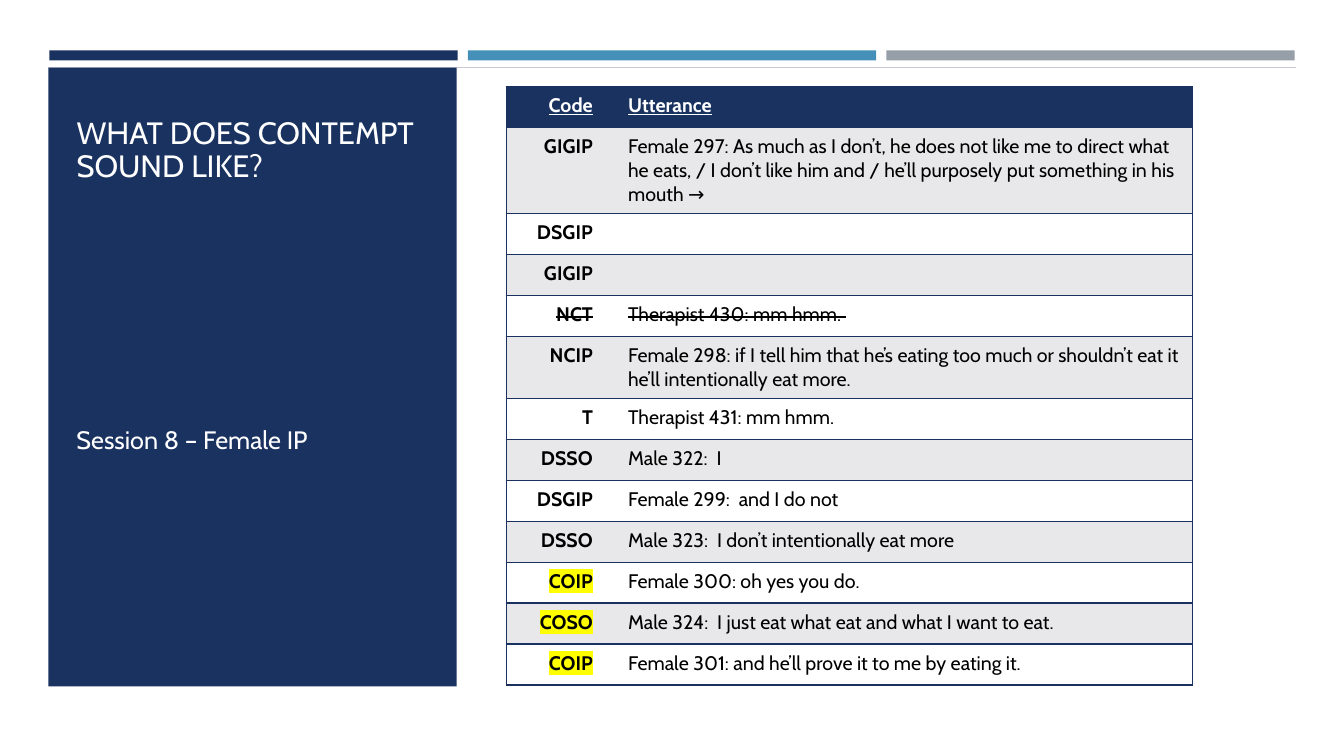
from lxml.etree import SubElement
from pptx import Presentation
from pptx.dml.color import RGBColor
from pptx.enum.shapes import MSO_CONNECTOR as Connector, MSO_SHAPE as Shape
from pptx.enum.text import MSO_ANCHOR as Anchor, MSO_AUTO_SIZE as AutoSize, PP_ALIGN as Align
from pptx.oxml.ns import qn
from pptx.util import Inches, Pt

NAVY, BLUE, GREY = "1A3260", "4590B8", "969FA7"
WHITE, BLACK, BAND, YELLOW, HAIRLINE = "FFFFFF", "000000", "E8E8EA", "FFFF00", "C8CCD2"
NO_GRID_STYLE = "{2D5ABB26-0587-4C30-8999-92F81FD0307C}"

UTTERANCES = [
    ("GIGIP", "Female 297: As much as I don’t, he does not like me to direct what he eats, "
              "/ I don’t like him and / he’ll purposely put something in his mouth →"),
    ("DSGIP", ""),
    ("GIGIP", ""),
    ("NCT", "Therapist 430: mm hmm. "),
    ("NCIP", "Female 298: if I tell him that he’s eating too much or shouldn’t eat it "
             "he’ll intentionally eat more."),
    ("T", "Therapist 431: mm hmm."),
    ("DSSO", "Male 322:  I"),
    ("DSGIP", "Female 299:  and I do not"),
    ("DSSO", "Male 323:  I don’t intentionally eat more"),
    ("COIP", "Female 300: oh yes you do."),
    ("COSO", "Male 324:  I just eat what eat and what I want to eat."),
    ("COIP", "Female 301: and he’ll prove it to me by eating it."),
]
ROW_HEIGHT = 0.407
TALL_ROWS = {1: 0.85, 5: 0.61}
STRUCK_CODES = {"NCT"}
CONTEMPT_CODES = {"COIP", "COSO"}


def color(value):
    """Turn a hex string into a colour."""
    return RGBColor.from_string(value)


class SlideBuilder:
    """Holds the font and the current slide and adds each kind of element."""

    def __init__(self, slide, font):
        self.slide = slide
        self.font = font

    def style(self, paragraph, size, text_color, bold=False, underline=False):
        """Format every run of a paragraph."""
        for run in paragraph.runs:
            run.font.name = self.font
            run.font.size = Pt(size)
            run.font.bold = bold
            run.font.underline = underline
            run.font.color.rgb = color(text_color)

    def bar(self, left, top, width, height, fill):
        """Add a plain filled rectangle."""
        shape = self.slide.shapes.add_shape(
            Shape.RECTANGLE, Inches(left), Inches(top), Inches(width), Inches(height))
        shape.shadow.inherit = False
        shape.fill.solid()
        shape.fill.fore_color.rgb = color(fill)
        shape.line.fill.background()

    def rule(self, left, right, top, line_color):
        """Add a horizontal hairline."""
        line = self.slide.shapes.add_connector(
            Connector.STRAIGHT, Inches(left), Inches(top), Inches(right), Inches(top))
        line.line.color.rgb = color(line_color)
        line.line.width = Pt(0.5)
        SubElement(line._element.spPr, qn("a:effectLst"))

    def title(self, text, left, top, width, height):
        """Place the title in front of the panel."""
        title = self.slide.shapes.title
        title.left, title.top = Inches(left), Inches(top)
        title.width, title.height = Inches(width), Inches(height)
        self.slide.shapes._spTree.append(title._element)
        self.fill_text(title.text_frame, text, 22, Anchor.BOTTOM)
        title.text_frame.paragraphs[0].line_spacing = 0.9

    def text(self, text, left, top, width, height):
        """Add a text box centred vertically."""
        box = self.slide.shapes.add_textbox(
            Inches(left), Inches(top), Inches(width), Inches(height))
        self.fill_text(box.text_frame, text, 18, Anchor.MIDDLE)

    def fill_text(self, frame, text, size, anchor):
        """Write white left-aligned text into a frame."""
        frame.text = text
        frame.word_wrap = True
        frame.auto_size = AutoSize.NONE
        frame.vertical_anchor = anchor
        frame.paragraphs[0].alignment = Align.LEFT
        self.style(frame.paragraphs[0], size, WHITE)

    def table(self, rows, left, top, widths, heights):
        """Add the table of codes and utterances."""
        frame = self.slide.shapes.add_table(
            len(rows), len(widths), Inches(left), Inches(top),
            Inches(sum(widths)), Inches(sum(heights)))
        table = frame.table
        table.horz_banding = False
        table._tbl.tblPr.find(qn("a:tableStyleId")).text = NO_GRID_STYLE
        for column, width in zip(table.columns, widths):
            column.width = Inches(width)
        for row_index, (row, height) in enumerate(zip(rows, heights)):
            table.rows[row_index].height = Inches(height)
            for column_index, text in enumerate(row):
                cell = table.cell(row_index, column_index)
                self.cell(cell, text, row_index, column_index == 0)
                if row[0] in STRUCK_CODES:
                    self.strike(cell)
                if text in CONTEMPT_CODES:
                    self.highlight(cell)

    def cell(self, cell, text, row_index, is_code):
        """Fill, border and write one table cell."""
        is_header = row_index == 0
        cell.text_frame.text = text
        cell.margin_left = Inches(0.14)
        cell.margin_right = Inches(0.21 if is_code else 0.06)
        cell.margin_top = cell.margin_bottom = Inches(0.07)
        paragraph = cell.text_frame.paragraphs[0]
        paragraph.alignment = Align.RIGHT if is_code else Align.LEFT
        self.style(paragraph, 14, WHITE if is_header else BLACK,
                   bold=is_header or is_code, underline=is_header)
        if not text:
            SubElement(paragraph._p, qn("a:endParaRPr"), sz="1400")
        for side in ("lnL" if is_code else "lnR", "lnT", "lnB"):
            line = SubElement(cell._tc.get_or_add_tcPr(), qn(f"a:{side}"), w=str(Pt(1)))
            SubElement(SubElement(line, qn("a:solidFill")), qn("a:srgbClr"), val=NAVY)
        cell.fill.solid()
        cell.fill.fore_color.rgb = color(NAVY if is_header else BAND if row_index % 2 else WHITE)

    def strike(self, cell):
        """Strike through the text of a cell."""
        for run in cell.text_frame.paragraphs[0].runs:
            run.font._element.set("strike", "sngStrike")

    def highlight(self, cell):
        """Mark the text of a cell in yellow."""
        for run in cell.text_frame.paragraphs[0].runs:
            properties = run.font._element
            mark = SubElement(properties, qn("a:highlight"))
            SubElement(mark, qn("a:srgbClr"), val=YELLOW)
            properties.find(qn("a:solidFill")).addnext(mark)


def main():
    """Build and save the slide."""
    presentation = Presentation()
    presentation.slide_width, presentation.slide_height = Inches(13.33), Inches(7.5)
    slide = presentation.slides.add_slide(presentation.slide_layouts[5])
    builder = SlideBuilder(slide, "Cabin")

    for index, fill in enumerate((NAVY, BLUE, GREY)):
        builder.bar(0.49 + index * 4.15, 0.5, 4.05, 0.1, fill)
    builder.rule(0.48, 12.85, 0.67, HAIRLINE)
    builder.bar(0.48, 0.67, 4.05, 6.14, NAVY)
    builder.title("WHAT DOES CONTEMPT SOUND LIKE?", 0.66, 0.77, 3.73, 1.11)
    builder.text("Session 8 – Female IP", 0.66, 2.15, 3.73, 4.41)

    rows = [("Code", "Utterance")] + UTTERANCES
    heights = [TALL_ROWS.get(index, ROW_HEIGHT) for index in range(len(rows))]
    builder.table(rows, 5.02, 0.86, (1.07, 5.74), heights)
    presentation.save("out.pptx")


if __name__ == "__main__":
    main()
